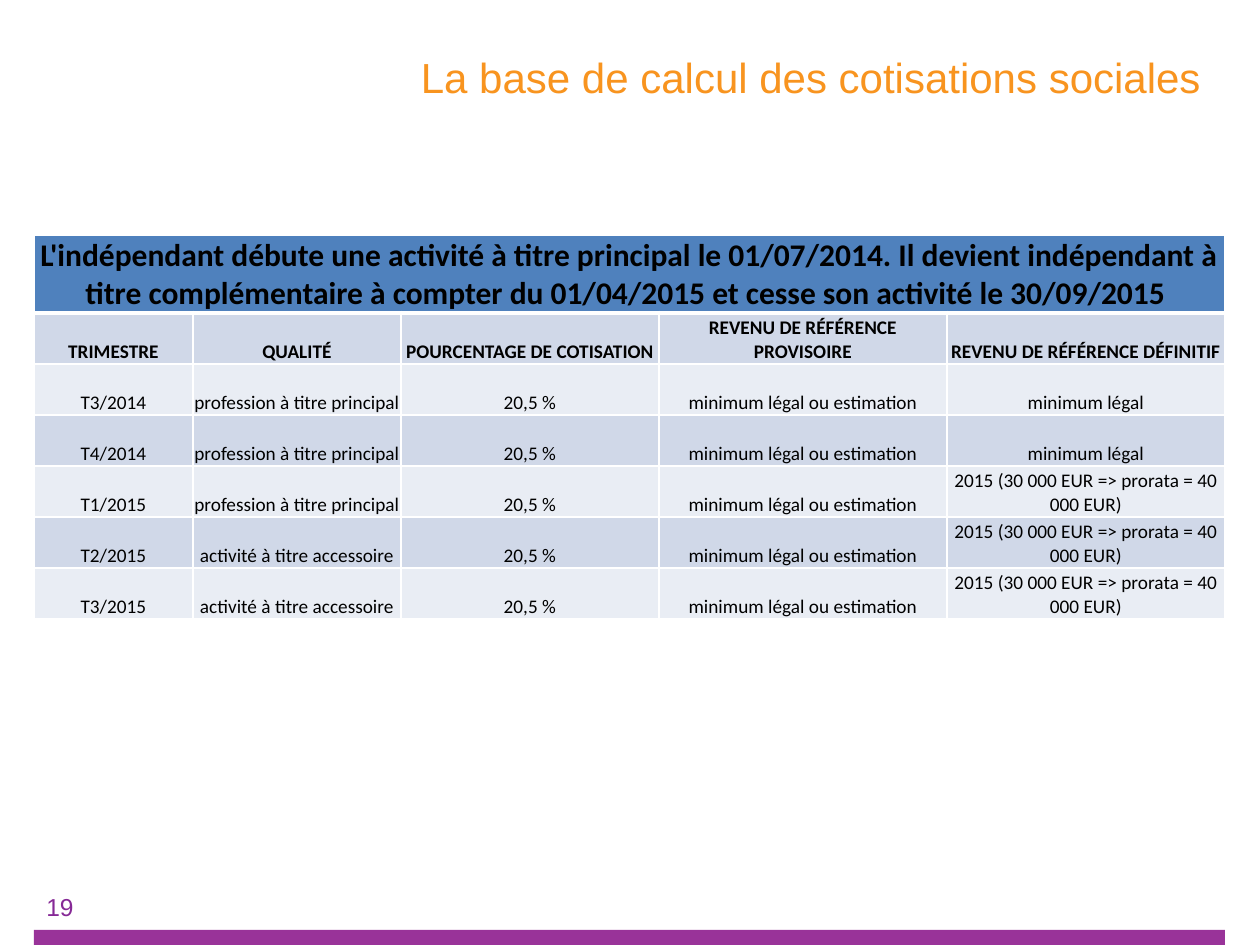
from dataclasses import dataclass

from lxml.etree import SubElement
from pptx import Presentation
from pptx.dml.color import RGBColor
from pptx.enum.shapes import MSO_SHAPE
from pptx.enum.text import MSO_ANCHOR, PP_ALIGN
from pptx.oxml.ns import qn
from pptx.util import Emu, Pt


@dataclass(frozen=True)
class Theme:
    heading_font: str = "Arial"
    table_font: str = "Calibri"
    orange: str = "F8941F"
    bar: str = "993399"
    page: str = "862996"
    black: str = "000000"
    white: str = "FFFFFF"
    banner: str = "4F81BD"
    bands: tuple = ("D0D8E8", "E9EDF4")
    title_size: int = 24
    banner_size: int = 18
    cell_size: int = 11
    page_size: int = 14


THEME = Theme()
EMU_PER_PX = 914400 // 126

BANNER = (
    "L'indépendant débute une activité à titre principal le 01/07/2014. "
    "Il devient indépendant à titre complémentaire à compter du 01/04/2015 "
    "et cesse son activité le 30/09/2015 "
)
HEADINGS = (
    "TRIMESTRE", "QUALITÉ", "POURCENTAGE DE COTISATION",
    "REVENU DE RÉFÉRENCE PROVISOIRE", "REVENU DE RÉFÉRENCE DÉFINITIF",
)
MAIN = "profession à titre principal"
SIDE = "activité à titre accessoire"
MINIMUM = "minimum légal"
PRORATA = "2015 (30 000 EUR => prorata = 40 000 EUR)"
QUARTERS = (
    ("T3/2014", MAIN, MINIMUM),
    ("T4/2014", MAIN, MINIMUM),
    ("T1/2015", MAIN, PRORATA),
    ("T2/2015", SIDE, PRORATA),
    ("T3/2015", SIDE, PRORATA),
)
COLUMN_WIDTHS = (159, 208, 258, 288, 278)
ROW_HEIGHT = 51


def px(value):
    return Emu(value * EMU_PER_PX)


def place(shape, box):
    shape.left, shape.top, shape.width, shape.height = map(px, box)


def write(text_frame, text, font_name, size, color, bold=False, align=PP_ALIGN.LEFT):
    text_frame.text = text
    paragraph = text_frame.paragraphs[0]
    paragraph.alignment = align
    font = paragraph.runs[0].font
    font.name, font.size, font.bold = font_name, Pt(size), bold
    font.color.rgb = RGBColor.from_string(color)


def add_title(slide, box):
    title = slide.shapes.title
    place(title, box)
    title.text_frame.vertical_anchor = MSO_ANCHOR.MIDDLE
    write(title.text_frame, "La base de calcul des cotisations sociales ",
          THEME.heading_font, THEME.title_size, THEME.orange, align=PP_ALIGN.RIGHT)


def set_borders(cell, top=1, bottom=1):
    properties = cell._tc.get_or_add_tcPr()
    for side, width in (("L", 1), ("R", 1), ("T", top), ("B", bottom)):
        line = SubElement(properties, qn(f"a:ln{side}"), w=str(Pt(width)))
        fill = SubElement(line, qn("a:solidFill"))
        SubElement(fill, qn("a:srgbClr"), val=THEME.white)


def style_cell(cell, fill, top=1, bottom=1):
    set_borders(cell, top, bottom)
    cell.fill.solid()
    cell.fill.fore_color.rgb = RGBColor.from_string(fill)
    cell.vertical_anchor = MSO_ANCHOR.BOTTOM
    cell.margin_left = cell.margin_right = cell.margin_top = px(1)
    cell.margin_bottom = 0


def add_contribution_table(slide, box):
    rows = [HEADINGS] + [
        (quarter, status, "20,5 %", "minimum légal ou estimation", final)
        for quarter, status, final in QUARTERS
    ]
    table = slide.shapes.add_table(
        len(rows) + 1, len(HEADINGS), *map(px, box)).table
    for column, width in zip(table.columns, COLUMN_WIDTHS):
        column.width = px(width)
    for row in table.rows:
        row.height = px(ROW_HEIGHT)

    # Banner across all columns
    for cell in table.rows[0].cells:
        style_cell(cell, THEME.banner, bottom=3)
    banner = table.cell(0, 0)
    banner.merge(table.cell(0, len(HEADINGS) - 1))
    write(banner.text_frame, BANNER, THEME.table_font, THEME.banner_size,
          THEME.black, bold=True, align=PP_ALIGN.CENTER)

    # Headings and quarters in alternating bands
    for index, texts in enumerate(rows):
        is_heading = index == 0
        for column, text in enumerate(texts):
            cell = table.cell(index + 1, column)
            style_cell(cell, THEME.bands[index % 2], top=3 if is_heading else 1)
            write(cell.text_frame, text, THEME.table_font, THEME.cell_size,
                  THEME.black, bold=is_heading, align=PP_ALIGN.CENTER)


def add_footer(slide, box):
    left, top, width, height = box
    bar_height = 15

    # Bar along the bottom
    bar = slide.shapes.add_shape(MSO_SHAPE.RECTANGLE, 0, 0, 0, 0)
    place(bar, (left, top + height - bar_height, width, bar_height))
    bar.shadow.inherit = False
    bar.fill.solid()
    bar.fill.fore_color.rgb = RGBColor.from_string(THEME.bar)
    bar.line.fill.background()

    # Page number
    number = slide.shapes.add_textbox(px(left), px(top), px(253), px(height))
    number.text_frame.word_wrap = True
    write(number.text_frame, "19", THEME.heading_font, THEME.page_size, THEME.page)


def main():
    presentation = Presentation()
    presentation.slide_width, presentation.slide_height = px(1260), px(945)
    slide = presentation.slides.add_slide(presentation.slide_layouts[5])
    add_title(slide, (289, 0, 936, 154))
    add_contribution_table(slide, (34, 235, 1191, 384))
    add_footer(slide, (34, 886, 1191, 59))
    presentation.save("out.pptx")


if __name__ == "__main__":
    main()
